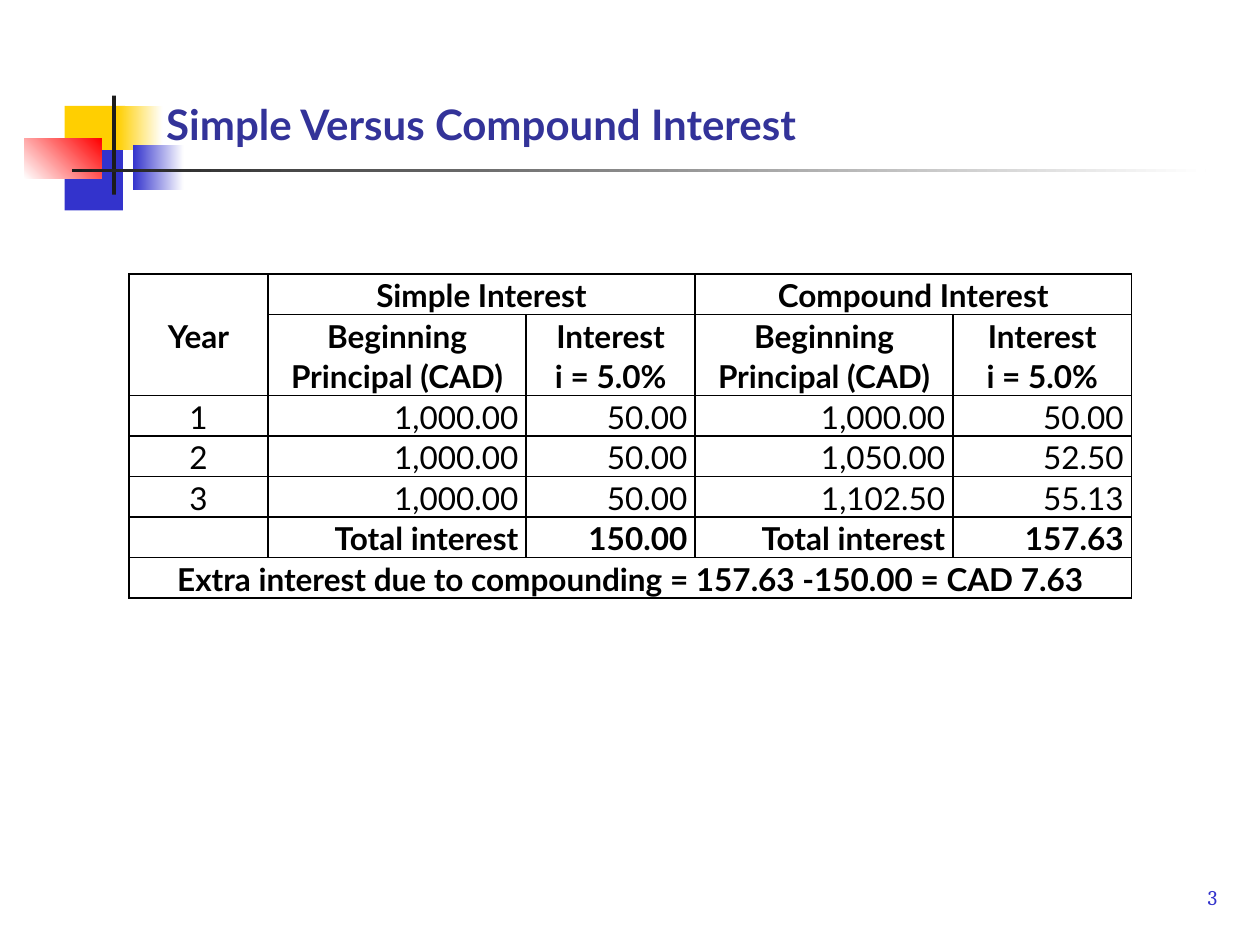
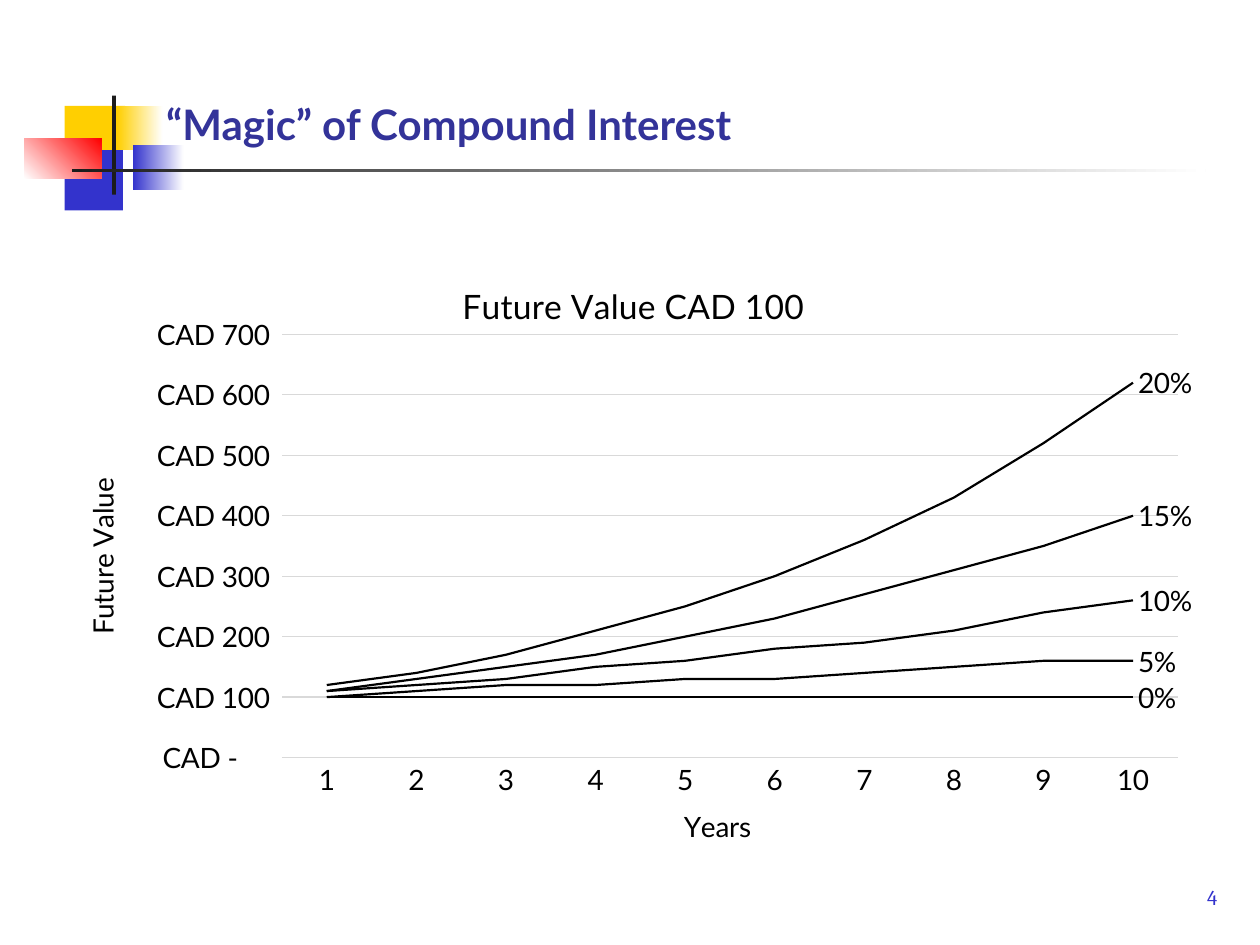
"""Build two slides that compare simple and compound interest."""
from dataclasses import dataclass
from typing import Optional

from lxml.etree import _Element as Node
from pptx import Presentation as Deck
from pptx.chart.data import CategoryChartData as Data
from pptx.dml.color import RGBColor as Rgb
from pptx.enum.chart import XL_CHART_TYPE as Kind, XL_LABEL_POSITION as Spot, XL_TICK_MARK as Tick
from pptx.enum.shapes import MSO_SHAPE as Form
from pptx.enum.text import MSO_ANCHOR as Anchor, MSO_AUTO_SIZE as Fit, PP_ALIGN as Align
from pptx.oxml import parse_xml
from pptx.oxml.ns import nsdecls, qn
from pptx.slide import Slide
from pptx.table import _Cell as Cell
from pptx.text.text import _Paragraph as Para
from pptx.util import Pt


@dataclass(frozen=True)
class Theme:
    font: str = "Lato"
    serif: str = "Cambria"
    black: str = "000000"
    white: str = "FFFFFF"
    ink: str = "1C1C1C"
    blue: str = "3333CC"
    navy: str = "333399"
    gold: str = "FFCF01"
    red: str = "FF0000"
    grid: str = "D9D9D9"
    title: float = 24
    head: float = 19.2
    body: float = 18
    label: float = 16
    page: float = 12


@dataclass(frozen=True)
class Block:
    left: float
    top: float
    width: float
    height: float
    color: str
    fade: Optional[str] = None
    angle: int = 0


LOOK = Theme()
BLOCKS = (
    Block(37, 82.8, 33.3, 37.5, LOOK.blue),
    Block(37, 60.5, 34.5, 25.2, LOOK.gold),
    Block(67, 60.5, 26, 25.2, LOOK.gold, LOOK.white),
    Block(75.8, 82.8, 29.2, 25.7, LOOK.blue, LOOK.white),
    Block(14, 79, 44, 23.2, LOOK.white, LOOK.red, 45),
    Block(64, 54.7, 2.3, 56.5, LOOK.ink),
    Block(41, 96.6, 648, 1.8, LOOK.ink, LOOK.white),
)

WIDTHS = (79.4, 147.6, 96.5, 147.4, 102)
LINE = 23.1
HEADS = 2
CAPTION = ("Beginning Principal (CAD)", "Interest\ni = 5.0%")
TOTAL = "Total interest"
ROWS = (
    ("Year", "Simple Interest", "", "Compound Interest", ""),
    ("", *CAPTION, *CAPTION),
    ("1", "1,000.00", "50.00", "1,000.00", "50.00"),
    ("2", "1,000.00", "50.00", "1,050.00", "52.50"),
    ("3", "1,000.00", "50.00", "1,102.50", "55.13"),
    ("", TOTAL, "150.00", TOTAL, "157.63"),
    ("Extra interest due to compounding = 157.63 -150.00 = CAD 7.63", "", "", "", ""),
)
MERGES = ((0, 0, 1, 0), (0, 1, 0, 2), (0, 3, 0, 4), (6, 0, 6, 4))

RATES = (0, 5, 10, 15, 20)
YEARS = range(1, 11)
MONEY = r'_-[$CAD]\ * #,##0_-;\-[$CAD]\ * #,##0_-;_-[$CAD]\ * "-"??_-;_-@_-'
PLOT = {"x": 0.187, "y": 0.128, "w": 0.797, "h": 0.69}
NAME = {"x": 0.54, "y": 0.89}


def put(para: Para, text: str, size: float, color: str = LOOK.black,
        bold: bool = False, name: str = LOOK.font) -> None:
    run = para.add_run()
    run.text = text
    font = run.font
    font.name, font.size, font.bold = name, Pt(size), bold
    font.color.rgb = Rgb.from_string(color)


def draw(slide: Slide, block: Block) -> None:
    shape = slide.shapes.add_shape(Form.RECTANGLE, Pt(block.left), Pt(block.top),
                                   Pt(block.width), Pt(block.height))
    shape.shadow.inherit = False
    shape.line.fill.background()
    if block.fade is None:
        shape.fill.solid()
        shape.fill.fore_color.rgb = Rgb.from_string(block.color)
        return
    shape.fill.gradient()
    shape.fill.gradient_angle = block.angle
    for stop, color in zip(shape.fill.gradient_stops, (block.color, block.fade)):
        stop.color.rgb = Rgb.from_string(color)


def start(deck: Deck, text: str, page: int) -> Slide:
    slide = deck.slides.add_slide(deck.slide_layouts[5])
    for block in BLOCKS:
        draw(slide, block)
    title = slide.shapes.title
    title.element.getparent().append(title.element)
    title.left, title.top, title.width, title.height = Pt(87.8), Pt(37.5), Pt(613), Pt(51)
    frame = title.text_frame
    frame.auto_size, frame.vertical_anchor = Fit.NONE, Anchor.BOTTOM
    frame.paragraphs[0].alignment = Align.LEFT
    put(frame.paragraphs[0], text, LOOK.title, LOOK.navy, True)

    foot = slide.shapes.add_textbox(Pt(552.7), Pt(503.5), Pt(150), Pt(36)).text_frame
    foot.word_wrap, foot.margin_top = True, Pt(2)
    foot.paragraphs[0].alignment = Align.RIGHT
    put(foot.paragraphs[0], str(page), LOOK.page, LOOK.blue, name=LOOK.serif)
    return slide


def edge(cell: Cell) -> None:
    props = cell._tc.get_or_add_tcPr()
    for side in "LRTB":
        props.append(parse_xml(
            f'<a:ln{side} {nsdecls("a")} w="{Pt(1)}"><a:solidFill>'
            f'<a:srgbClr val="{LOOK.black}"/></a:solidFill></a:ln{side}>'))
    cell.fill.background()


def write(cell: Cell, text: str, side: Align, bold: bool) -> None:
    cell.margin_left = cell.margin_right = Pt(4.5)
    cell.margin_top = cell.margin_bottom = 0
    if not text:
        return
    frame = cell.text_frame
    for num, line in enumerate(text.split("\n")):
        para = frame.add_paragraph() if num else frame.paragraphs[0]
        para.alignment, para.line_spacing = side, 1.07
        put(para, line, LOOK.body, bold=bold)


def add_grid(slide: Slide) -> None:
    lines = [max(text.count("\n") + 1 for text in row) for row in ROWS]
    table = slide.shapes.add_table(len(ROWS), len(WIDTHS), Pt(73.7), Pt(156.7),
                                   Pt(sum(WIDTHS)), Pt(LINE * sum(lines))).table
    table.first_row = table.horz_banding = False
    for col, width in zip(table.columns, WIDTHS):
        col.width = Pt(width)
    last = len(ROWS) - 1
    for r, row in enumerate(ROWS):
        table.rows[r].height = Pt(LINE * lines[r])
        for c, text in enumerate(row):
            mid = r < HEADS or r == last or c == 0
            cell = table.cell(r, c)
            write(cell, text, Align.CENTER if mid else Align.RIGHT,
                  r < HEADS or r >= last - 1)
            edge(cell)
    for top, left, end, right in MERGES:
        table.cell(top, left).merge(table.cell(end, right))
    table.cell(0, 0).vertical_anchor = Anchor.MIDDLE


def place(node: Node, index: int, spots: dict[str, float], inner: str = "") -> None:
    for old in node.findall(qn("c:layout")):
        node.remove(old)
    modes = "".join(f'<c:{key}Mode val="edge"/>' for key in "xy")
    sizes = "".join(f'<c:{key} val="{val}"/>' for key, val in spots.items())
    node.insert(index, parse_xml(
        f'<c:layout {nsdecls("c")}><c:manualLayout>{inner}'
        f'{modes}{sizes}</c:manualLayout></c:layout>'))


def add_curves(slide: Slide) -> None:
    data = Data()
    data.categories = [str(year) for year in YEARS]
    for num, rate in enumerate(RATES, 1):
        data.add_series(f"Series {num}",
                        [int(round(100 * (1 + rate / 100) ** year, -1)) for year in YEARS])
    chart = slide.shapes.add_chart(Kind.LINE, Pt(41), Pt(146.2), Pt(642.4), Pt(350.6), data).chart
    chart.has_legend = False
    chart.font.name, chart.font.size = LOOK.font, Pt(LOOK.label)
    chart.font.color.rgb = Rgb.from_string(LOOK.black)
    put(chart.chart_title.text_frame.paragraphs[0], "Future Value CAD 100", LOOK.head)
    chart.chart_title.include_in_layout = False
    place(chart.element.find(".//" + qn("c:plotArea")), 0, PLOT,
          '<c:layoutTarget val="inner"/>')

    base, rise = chart.category_axis, chart.value_axis
    for axis, text in ((base, "Years"), (rise, "Future Value")):
        put(axis.axis_title.text_frame.paragraphs[0], text, LOOK.label)
        axis.major_tick_mark = axis.minor_tick_mark = Tick.NONE
    place(base.axis_title.element, 1, NAME)
    rise.minimum_scale, rise.maximum_scale, rise.major_unit = 0, 700, 100
    rise.tick_labels.number_format = MONEY
    rise.tick_labels.number_format_is_linked = False
    rise.format.line.fill.background()
    for line in (base.format.line, rise.major_gridlines.format.line):
        line.width, line.color.rgb = Pt(0.75), Rgb.from_string(LOOK.grid)

    plot = chart.plots[0]
    plot.vary_by_categories = False
    for curve, rate in zip(plot.series, RATES):
        curve.smooth = False
        line = curve.format.line
        line.width, line.color.rgb = Pt(1.25), Rgb.from_string(LOOK.black)
        label = curve.points[len(YEARS) - 1].data_label
        put(label.text_frame.paragraphs[0], f"{rate}%", LOOK.label)
        label.position = Spot.RIGHT


def main() -> None:
    deck = Deck()
    deck.slide_width, deck.slide_height = Pt(720), Pt(540)
    add_grid(start(deck, "Simple Versus Compound Interest", 3))
    add_curves(start(deck, "“Magic” of Compound Interest", 4))
    deck.save("out.pptx")


if __name__ == "__main__":
    main()
